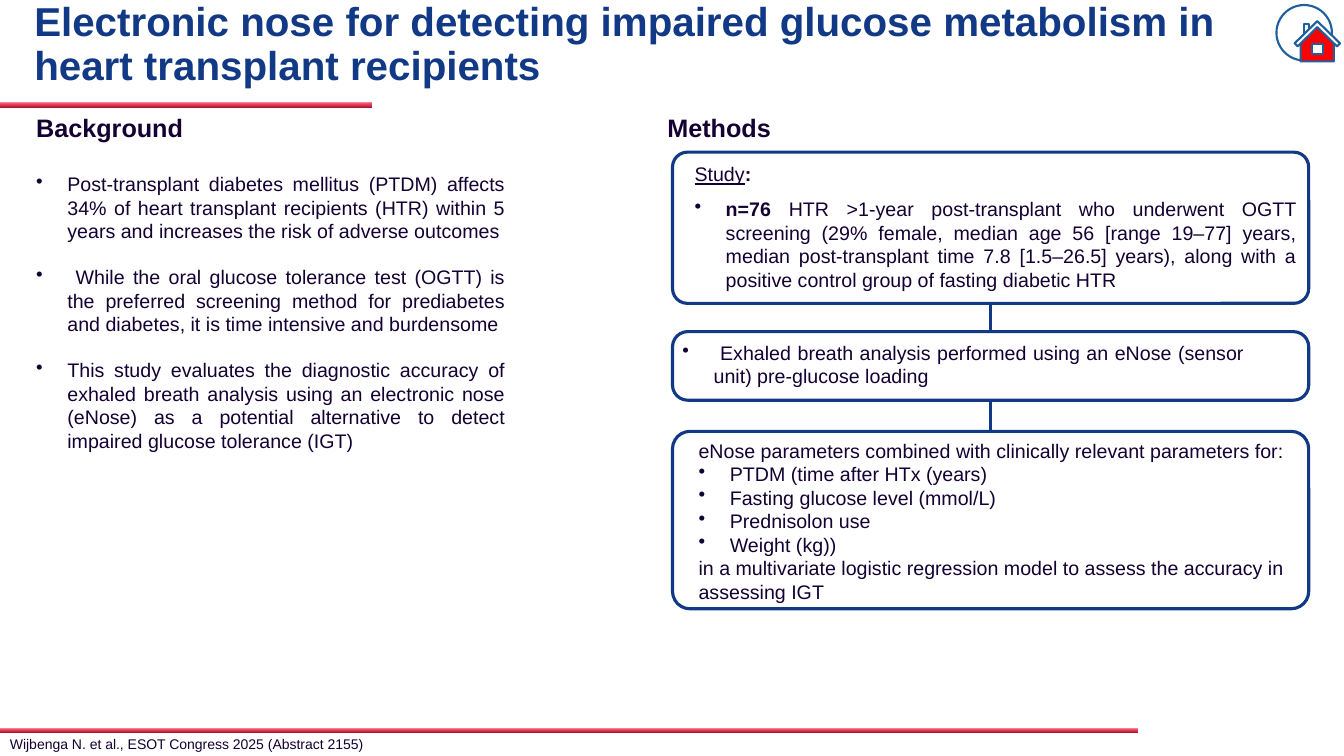
from copy import deepcopy

from pptx import Presentation
from pptx.dml.color import RGBColor
from pptx.enum.shapes import MSO_CONNECTOR as Connector, MSO_SHAPE as Shape
from pptx.enum.text import MSO_ANCHOR as Anchor, PP_ALIGN as Align
from pptx.oxml.xmlchemy import OxmlElement
from pptx.util import Inches, Pt

THEME = {
    "font": "Arial",
    "title": "123986", "ink": "140032", "frame": "113986",
    "icon": "215F9A", "house": "FF0000", "white": "FFFFFF",
    "bar": [(0, "A7142D"), (0.48, "E73855"), (1, "F08496")],
    "title_size": 28.8, "heading_size": 18, "body_size": 14, "source_size": 10,
    "frame_width": 2.25, "icon_width": 1.5,
}
BODY = {"size": Pt(THEME["body_size"])}
HEADING = {"size": Pt(THEME["heading_size"]), "bold": True}
TITLE = {"size": Pt(THEME["title_size"]), "bold": True}
SOURCE = {"size": Pt(THEME["source_size"])}
BOLD = {**BODY, "bold": True}
UNDERLINED = {**BODY, "underline": True}

PLAIN = {}
JUSTIFIED = {"alignment": Align.JUSTIFY}
HANGING = 0.31

TITLE_TEXT = "Electronic nose for detecting impaired glucose metabolism in heart transplant recipients"
BACKGROUND = [
    "Post-transplant diabetes mellitus (PTDM) affects 34% of heart transplant recipients (HTR) "
    "within 5 years and increases the risk of adverse outcomes",
    " While the oral glucose tolerance test (OGTT) is the preferred screening method for "
    "prediabetes and diabetes, it is time intensive and burdensome",
    "This study evaluates the diagnostic accuracy of exhaled breath analysis using an electronic "
    "nose (eNose) as a potential alternative to detect impaired glucose tolerance (IGT)",
]
STUDY = (
    "HTR >1-year post-transplant who underwent OGTT screening (29% female, median age 56 "
    "[range 19–77] years, median post-transplant time 7.8 [1.5–26.5] years), along with a "
    "positive control group of fasting diabetic HTR"
)
BREATH = " Exhaled breath analysis performed using an eNose (sensor unit) pre-glucose loading"
MODEL_INTRO = "eNose parameters combined with clinically relevant parameters for:"
PARAMETERS = ["PTDM (time after HTx (years)", "Fasting glucose level (mmol/L)", "Prednisolon use", "Weight (kg))"]
MODEL_END = "in a multivariate logistic regression model to assess the accuracy in assessing IGT"
REFERENCE = "Wijbenga N. et al., ESOT Congress 2025 (Abstract 2155)"

BARS = [(0, 1.01, 3.69, 0.06), (0, 7.22, 11.29, 0.05)]
FRAME_LEFT, FRAME_WIDTH = 6.67, 6.31
FRAMES = [(1.51, 1.5, 0.098), (3.29, 0.68, 0.221), (4.28, 1.76, 0.098)]
HOUSE = [(13.07, 0.25), (13.23, 0.39), (13.23, 0.61), (12.9, 0.61), (12.9, 0.39)]
ROOF = [(13.065, 0.21), (13.29, 0.43), (13.26, 0.46), (13.065, 0.27), (12.87, 0.46), (12.84, 0.43)]

presentation = Presentation()
presentation.slide_width, presentation.slide_height = Inches(13.33), Inches(7.5)
slide = presentation.slides.add_slide(presentation.slide_layouts[6])


def color(name):
    return RGBColor.from_string(THEME.get(name, name))


def apply(target, values):
    for name, value in values.items():
        setattr(target, name, value)


def style(shape, fill=None, line=None, width=THEME["icon_width"]):
    shape.shadow.inherit = False
    if fill:
        shape.fill.solid()
        shape.fill.fore_color.rgb = color(fill)
    else:
        shape.fill.background()
    if line:
        shape.line.color.rgb = color(line)
        shape.line.width = Pt(width)
    else:
        shape.line.fill.background()
    return shape


def add_shape(kind, box, **look):
    return style(slide.shapes.add_shape(kind, *map(Inches, box)), **look)


def add_outline(points, **look):
    corners = [(Inches(x), Inches(y)) for x, y in points]
    builder = slide.shapes.build_freeform(*corners[0])
    builder.add_line_segments(corners[1:], close=True)
    return style(builder.convert_to_shape(), **look)


def add_bar(box):
    bar = add_shape(Shape.RECTANGLE, box)
    bar.fill.gradient()
    bar.fill.gradient_angle = 90
    first = bar.element.spPr.xpath("./a:gradFill/a:gsLst/a:gs")[0]
    first.addnext(deepcopy(first))
    for stop, (position, shade) in zip(bar.fill.gradient_stops, THEME["bar"]):
        stop.position = position
        stop.color.rgb = color(shade)


def add_bullet(paragraph):
    properties = paragraph._p.get_or_add_pPr()
    properties.set("marL", str(Inches(HANGING)))
    properties.set("indent", str(-Inches(HANGING)))
    bullet = OxmlElement("a:buChar")
    bullet.set("char", "•")
    properties.append(bullet)


def add_text(box, paragraphs, ink="ink", frame_format=PLAIN):
    frame = slide.shapes.add_textbox(*map(Inches, box)).text_frame
    apply(frame, {"word_wrap": True, **frame_format})
    for index, (runs, values, bulleted) in enumerate(paragraphs):
        paragraph = frame.add_paragraph() if index else frame.paragraphs[0]
        apply(paragraph, values)
        if bulleted:
            add_bullet(paragraph)
        for text, font_format in runs:
            run = paragraph.add_run()
            run.text = text
            apply(run.font, {"name": THEME["font"], **font_format})
            run.font.color.rgb = color(ink)


no_margins = dict.fromkeys(["margin_left", "margin_top", "margin_right", "margin_bottom"], 0)
add_text((0.34, 0.23, 12, 0.44), [([(TITLE_TEXT, TITLE)], {"line_spacing": 0.9}, False)],
         "title", {"vertical_anchor": Anchor.MIDDLE, **no_margins})
for box in BARS:
    add_bar(box)

add_shape(Shape.OVAL, (12.66, 0.05, 0.55, 0.55), line="icon")
add_shape(Shape.RECTANGLE, (12.93, 0.24, 0.05, 0.14), fill="white", line="icon")
add_outline(HOUSE, fill="house", line="icon")
add_shape(Shape.RECTANGLE, (13.01, 0.44, 0.11, 0.1), fill="white", line="icon")
add_outline(ROOF, fill="white", line="icon")

background = [([("Background", HEADING)], PLAIN, False)]
for index, text in enumerate(BACKGROUND):
    gap = Pt(16.1 if index else 20.7)
    background.append(([(text, BODY)], {**JUSTIFIED, "space_before": gap}, True))
add_text((0.26, 1.07, 4.85, 3.53), background)
add_text((6.52, 1.07, 5.35, 0.4), [([("Methods", HEADING)], PLAIN, False)])

frames = []
for top, height, rounding in FRAMES:
    frame = add_shape(Shape.ROUNDED_RECTANGLE, (FRAME_LEFT, top, FRAME_WIDTH, height),
                      line="frame", width=THEME["frame_width"])
    frame.adjustments[0] = rounding
    frames.append(frame)

for upper, lower in zip(frames, frames[1:]):
    link = slide.shapes.add_connector(Connector.STRAIGHT, 0, 0, 0, 0)
    link.begin_connect(lower, 0)
    link.end_connect(upper, 2)
    link.line.color.rgb = color("frame")
    link.line.width = Pt(THEME["frame_width"])
    link.element.spPr.append(OxmlElement("a:effectLst"))

add_text((6.79, 1.56, 6.17, 1.45), [
    ([("Study", UNDERLINED), (":", BOLD)], JUSTIFIED, False),
    ([("n=76 ", BOLD), (STUDY, BODY)], {**JUSTIFIED, "space_before": Pt(8)}, True),
])
add_text((6.67, 3.33, 5.77, 0.59), [([(BREATH, BODY)], JUSTIFIED, True)])
add_text((6.83, 4.3, 6.01, 1.75), [
    ([(MODEL_INTRO, BODY)], PLAIN, False),
    *[([(text, BODY)], PLAIN, True) for text in PARAMETERS],
    ([(MODEL_END, BODY)], PLAIN, False),
])
add_text((0, 7.25, 6.67, 0.27), [([(REFERENCE, SOURCE)], PLAIN, False)])

presentation.save("out.pptx")
